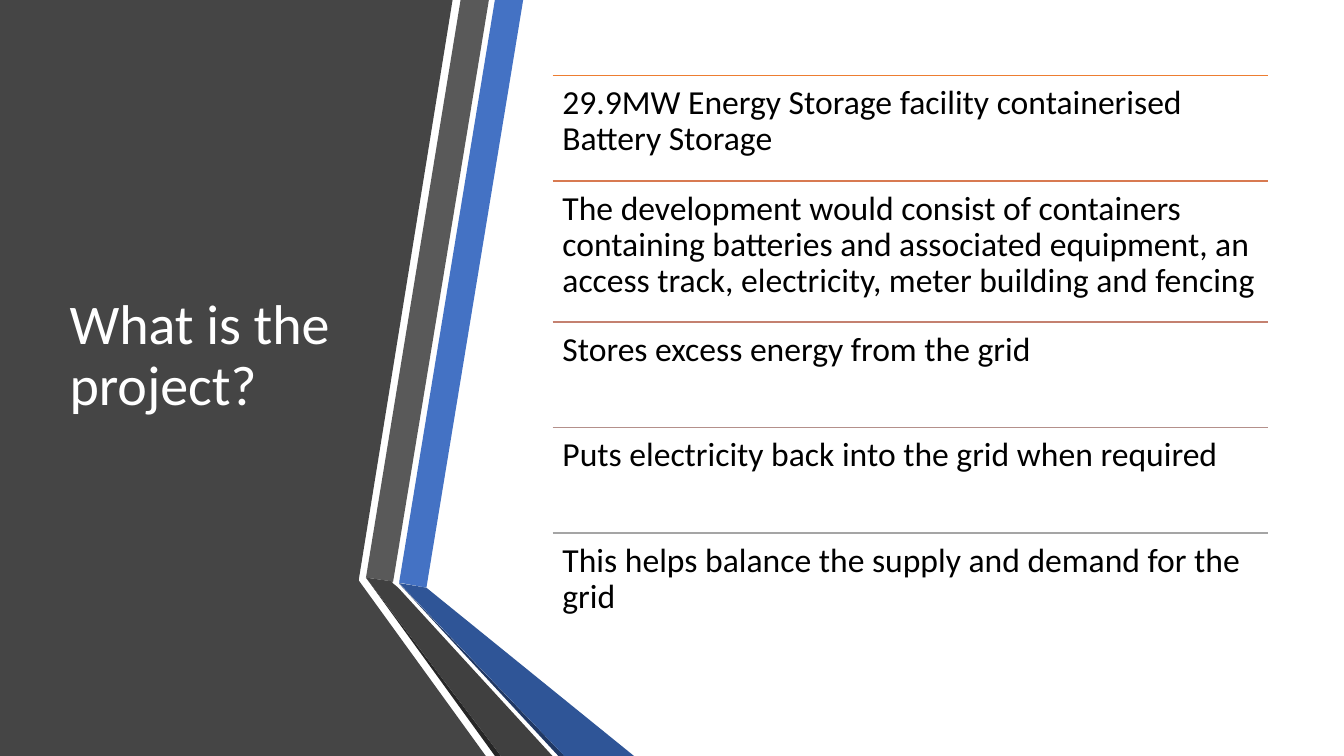
import dataclasses

import lxml.etree
import pptx
import pptx.dml.color
import pptx.enum.shapes
import pptx.enum.text
import pptx.oxml.ns
import pptx.shapes.autoshape
import pptx.slide
import pptx.util

Pt = pptx.util.Pt
RGBColor = pptx.dml.color.RGBColor

WHITE = RGBColor(0xFF, 0xFF, 0xFF)
BLACK = RGBColor(0x00, 0x00, 0x00)
PANEL_GRAY = RGBColor(0x45, 0x45, 0x45)
BAND_BLUE = RGBColor(0x44, 0x72, 0xC4)
BAND_GRAY = RGBColor(0x59, 0x59, 0x59)
EDGE_GRAY = RGBColor(0x26, 0x26, 0x26)
EDGE_BLUE = RGBColor(0x20, 0x38, 0x64)
FOLD_BLUE = RGBColor(0x2F, 0x55, 0x97)
FOLD_GRAY = RGBColor(0x40, 0x40, 0x40)

FONT = "Calibri"
SLIDE_WIDTH, SLIDE_HEIGHT = 960, 540
LIST_LEFT, LIST_TOP, LIST_WIDTH = 394.7, 54, 511.2
SHORT_ROW, TALL_ROW = 75.3, 100.8
ROW_INSET = 7.2


@dataclasses.dataclass(frozen=True)
class Outline:
    color: RGBColor
    points: tuple[tuple[float, float], ...]


@dataclasses.dataclass(frozen=True)
class Row:
    text: str
    rule_color: RGBColor
    height: float = SHORT_ROW


OUTLINES = (
    Outline(PANEL_GRAY, ((0, 0), (323.3, 0), (256.3, 414), (256.3, 414.7),
                         (347, 540), (0, 540))),
    Outline(BAND_BLUE, ((285.1, 416.2), (304.6, 419.8), (373.7, 0), (353.5, 0))),
    Outline(BAND_GRAY, ((349.2, 0), (329, 0), (261.4, 412.6), (280.8, 415.4))),
    Outline(EDGE_GRAY, ((261.4, 412.6), (353.5, 540), (357.8, 540))),
    Outline(EDGE_BLUE, ((285.1, 416.9), (398.9, 540), (403.2, 540))),
    Outline(FOLD_BLUE, ((285.1, 416.5), (403.2, 540), (452.9, 540), (304.6, 419.8))),
    Outline(FOLD_GRAY, ((394.6, 540), (284.4, 419.8), (280.1, 416.2),
                        (280.8, 415.4), (261.4, 412.6), (357.8, 540))),
)

ROWS = (
    Row("29.9MW Energy Storage facility containerised Battery Storage",
        RGBColor(0xED, 0x7D, 0x31)),
    Row("The development would consist of containers containing batteries and "
        "associated equipment, an access track, electricity, meter building and fencing",
        RGBColor(0xD8, 0x7A, 0x51), TALL_ROW),
    Row("Stores excess energy from the grid", RGBColor(0xC4, 0x81, 0x70)),
    Row("Puts electricity back into the grid when required",
        RGBColor(0xB4, 0x90, 0x8B)),
    Row("This helps balance the supply and demand for the grid",
        RGBColor(0xA5, 0xA5, 0xA5)),
)


def draw_outline(slide: pptx.slide.Slide, outline: Outline) -> None:
    start, *others = [(Pt(x), Pt(y)) for x, y in outline.points]
    builder = slide.shapes.build_freeform(*start)
    builder.add_line_segments(others, close=True)
    shape = builder.convert_to_shape()
    shape.shadow.inherit = False
    shape.fill.solid()
    shape.fill.fore_color.rgb = outline.color
    shape.line.fill.background()


def write_text(shape: pptx.shapes.autoshape.Shape, text: str, size: float,
               color: RGBColor) -> None:
    shape.text_frame.text = text
    shape.text_frame.word_wrap = True
    shape.text_frame.auto_size = pptx.enum.text.MSO_AUTO_SIZE.NONE
    paragraph = shape.text_frame.paragraphs[0]
    paragraph.alignment = pptx.enum.text.PP_ALIGN.LEFT
    paragraph.line_spacing = 0.9
    paragraph.font.name = FONT
    paragraph.font.size = Pt(size)
    paragraph.font.color.rgb = color


def draw_title(slide: pptx.slide.Slide) -> None:
    title = slide.shapes.title
    title.left, title.top = Pt(42.5), Pt(54)
    title.width, title.height = Pt(218.9), Pt(401.8)
    write_text(title, "What is the project?", 40, WHITE)
    title.text_frame.vertical_anchor = pptx.enum.text.MSO_ANCHOR.MIDDLE
    # Bring the title in front of the dark panel
    slide.shapes[-1].element.addnext(title.element)


def draw_row(slide: pptx.slide.Slide, row: Row, top: float) -> None:
    rule = slide.shapes.add_connector(
        pptx.enum.shapes.MSO_CONNECTOR.STRAIGHT,
        Pt(LIST_LEFT), Pt(top), Pt(LIST_LEFT + LIST_WIDTH), Pt(top))
    rule.line.color.rgb = row.rule_color
    rule.line.width = Pt(1)
    lxml.etree.SubElement(rule.element.spPr, pptx.oxml.ns.qn("a:effectLst"))

    box = slide.shapes.add_textbox(
        Pt(LIST_LEFT), Pt(top), Pt(LIST_WIDTH), Pt(row.height))
    frame = box.text_frame
    frame.margin_left = frame.margin_right = Pt(ROW_INSET)
    frame.margin_top = frame.margin_bottom = Pt(ROW_INSET)
    write_text(box, row.text, 24, BLACK)


def main() -> None:
    presentation = pptx.Presentation()
    presentation.slide_width = Pt(SLIDE_WIDTH)
    presentation.slide_height = Pt(SLIDE_HEIGHT)
    title_only = presentation.slide_layouts.get_by_name("Title Only")
    slide = presentation.slides.add_slide(title_only)

    # Dark panel and folded bands
    for outline in OUTLINES:
        draw_outline(slide, outline)

    draw_title(slide)

    # Ruled list of project facts
    top = LIST_TOP
    for row in ROWS:
        draw_row(slide, row, top)
        top += row.height

    presentation.save("out.pptx")


if __name__ == "__main__":
    main()
